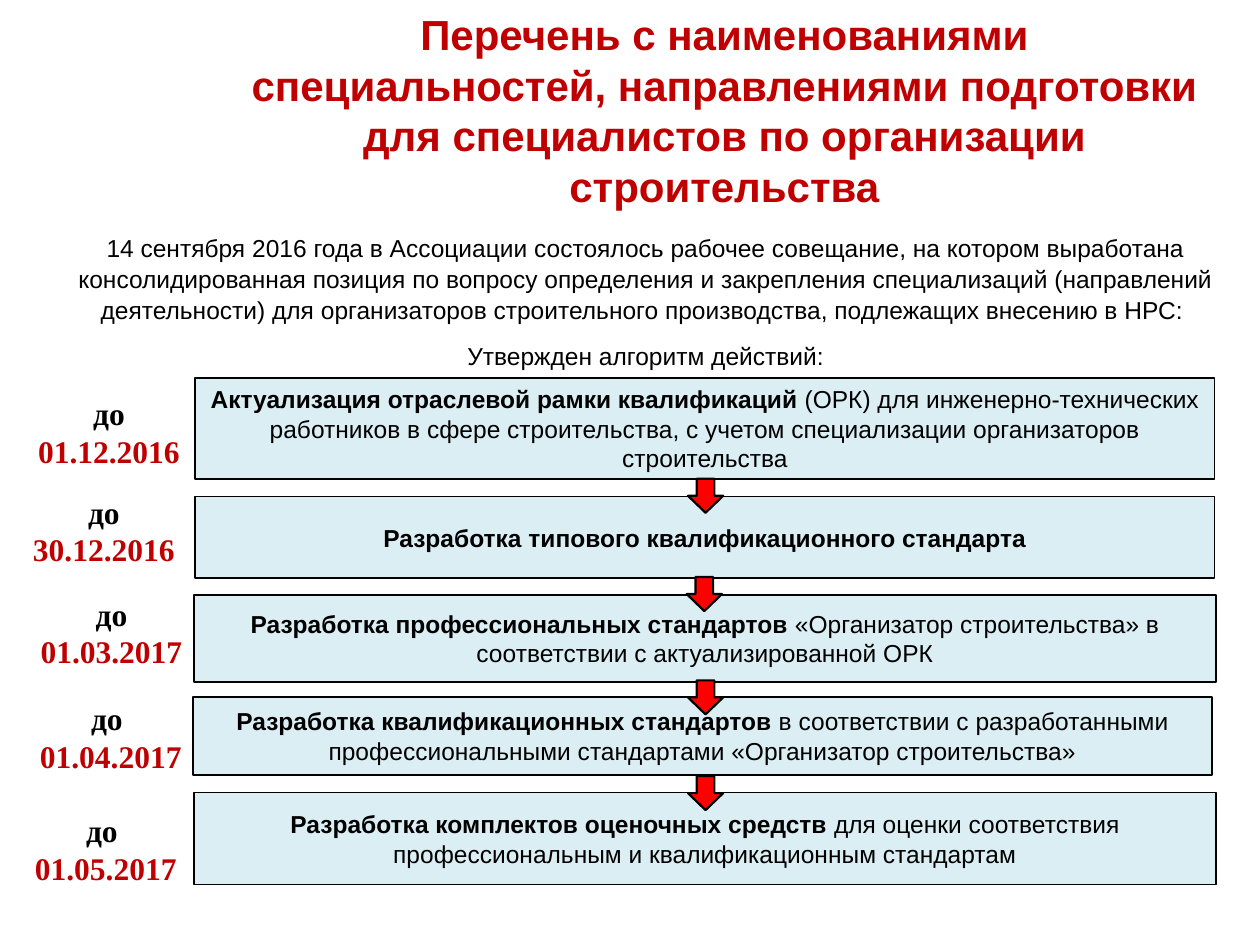
from dataclasses import dataclass

from pptx import Presentation
from pptx.dml.color import RGBColor
from pptx.enum.shapes import MSO_SHAPE as Preset
from pptx.enum.text import MSO_ANCHOR as Anchor, MSO_AUTO_SIZE as AutoSize, PP_ALIGN as Align
from pptx.util import Emu, Pt

EMU_PER_PX = 9144


@dataclass(frozen=True)
class Theme:
    sans: str = "Arial"
    serif: str = "Times New Roman"
    black: str = "000000"
    accent: str = "C00000"
    box: str = "DBEEF4"
    arrow: str = "FF0000"
    title_size: int = 24
    body_size: int = 14
    date_size: int = 18


THEME = Theme()
TITLE_STYLE = {"name": THEME.sans, "size": THEME.title_size, "color": THEME.accent, "bold": True}
BODY_STYLE = {"name": THEME.sans, "size": THEME.body_size, "color": THEME.black, "bold": False}
STRONG_STYLE = {**BODY_STYLE, "bold": True}
UNTIL_STYLE = {"name": THEME.serif, "size": THEME.date_size, "color": THEME.black, "bold": True}
DATE_STYLE = {**UNTIL_STYLE, "color": THEME.accent}

TITLE = ("Перечень с наименованиями специальностей, направлениями подготовки "
         "для специалистов по организации строительства")
INTRO = [
    "14 сентября 2016 года в Ассоциации состоялось рабочее совещание, на котором выработана "
    "консолидированная позиция по вопросу определения и закрепления специализаций (направлений "
    "деятельности) для организаторов строительного производства, подлежащих внесению в НРС: ",
    "Утвержден алгоритм действий:",
]

# Box in px, bold text, plain text
STEPS = [
    ((155, 300, 809, 80), "Актуализация отраслевой рамки квалификаций",
     " (ОРК) для инженерно-технических работников в сфере строительства, "
     "с учетом специализации организаторов строительства"),
    ((155, 394, 809, 65), "Разработка типового квалификационного стандарта", ""),
    ((154, 472, 811, 69), "Разработка профессиональных стандартов",
     " «Организатор строительства» в соответствии с актуализированной ОРК"),
    ((153, 553, 809, 62), "Разработка квалификационных стандартов",
     " в соответствии с разработанными профессиональными стандартами «Организатор строительства»"),
    ((154, 629, 811, 73), "Разработка комплектов оценочных средств",
     " для оценки соответствия профессиональным и квалификационным стандартам"),
]

# Box in px, date, whether the label wraps by itself
DEADLINES = [
    ((10, 308, 153, 71), "01.12.2016", True),
    ((6, 386, 153, 71), "30.12.2016", True),
    ((12, 467, 153, 71), "01.03.2017", True),
    ((21, 550, 134, 71), "01.04.2017", False),
    ((17, 639, 134, 71), "01.05.2017", False),
]

ARROWS = [(546, 380), (545, 458), (546, 540), (546, 616)]
ARROW_SIZE = (28, 27)


def px(*lengths):
    return [Emu(length * EMU_PER_PX) for length in lengths]


def set_attributes(target, values):
    for name, value in values.items():
        setattr(target, name, value)


def write(frame, paragraphs, frame_format, paragraph_format=None):
    """Fill a text frame; each paragraph is a list of (text, style) runs."""
    set_attributes(frame, frame_format)
    for index, runs in enumerate(paragraphs):
        paragraph = frame.add_paragraph() if index else frame.paragraphs[0]
        set_attributes(paragraph, {"alignment": Align.CENTER, **(paragraph_format or {})})
        for text, style in runs:
            run = paragraph.add_run()
            run.text = text
            set_attributes(run.font, {"name": style["name"], "size": Pt(style["size"]),
                                      "bold": style["bold"]})
            run.font.color.rgb = RGBColor.from_string(style["color"])


def add_text(slide, box, paragraphs, frame_format, paragraph_format=None):
    shape = slide.shapes.add_textbox(*px(*box))
    write(shape.text_frame, paragraphs, frame_format, paragraph_format)


def add_outlined_shape(slide, preset, box, fill, line_width):
    shape = slide.shapes.add_shape(preset, *px(*box))
    shape.shadow.inherit = False
    shape.fill.solid()
    shape.fill.fore_color.rgb = RGBColor.from_string(fill)
    shape.line.color.rgb = RGBColor.from_string(THEME.black)
    shape.line.width = Pt(line_width)
    return shape


def add_step(slide, box, strong, plain):
    shape = add_outlined_shape(slide, Preset.RECTANGLE, box, THEME.box, 1)
    runs = [(strong, STRONG_STYLE)]
    if plain:
        runs.append((plain, BODY_STYLE))
    write(shape.text_frame, [runs], {"word_wrap": True, "vertical_anchor": Anchor.MIDDLE})


def add_deadline(slide, box, date, wraps):
    runs = [("до ", UNTIL_STYLE), (date, DATE_STYLE)]
    paragraphs = [runs] if wraps else [[run] for run in runs]
    add_text(slide, box, paragraphs,
             {"word_wrap": wraps, "auto_size": AutoSize.SHAPE_TO_FIT_TEXT})


def main():
    presentation = Presentation()
    size = px(1000, 750)
    set_attributes(presentation, {"slide_width": size[0], "slide_height": size[1]})
    slide = presentation.slides.add_slide(presentation.slide_layouts[6])

    add_text(slide, (185, 21, 780, 132), [[(TITLE, TITLE_STYLE)]],
             {"word_wrap": True, "vertical_anchor": Anchor.MIDDLE})
    add_text(slide, (35, 178, 955, 122), [[(text, BODY_STYLE)] for text in INTRO],
             {"word_wrap": True, "auto_size": AutoSize.SHAPE_TO_FIT_TEXT},
             {"line_spacing": 1.07, "space_after": Pt(8)})
    for step in STEPS:
        add_step(slide, *step)
    for deadline in DEADLINES:
        add_deadline(slide, *deadline)
    for position in ARROWS:
        add_outlined_shape(slide, Preset.DOWN_ARROW, position + ARROW_SIZE, THEME.arrow, 1.25)

    presentation.save("out.pptx")


if __name__ == "__main__":
    main()
